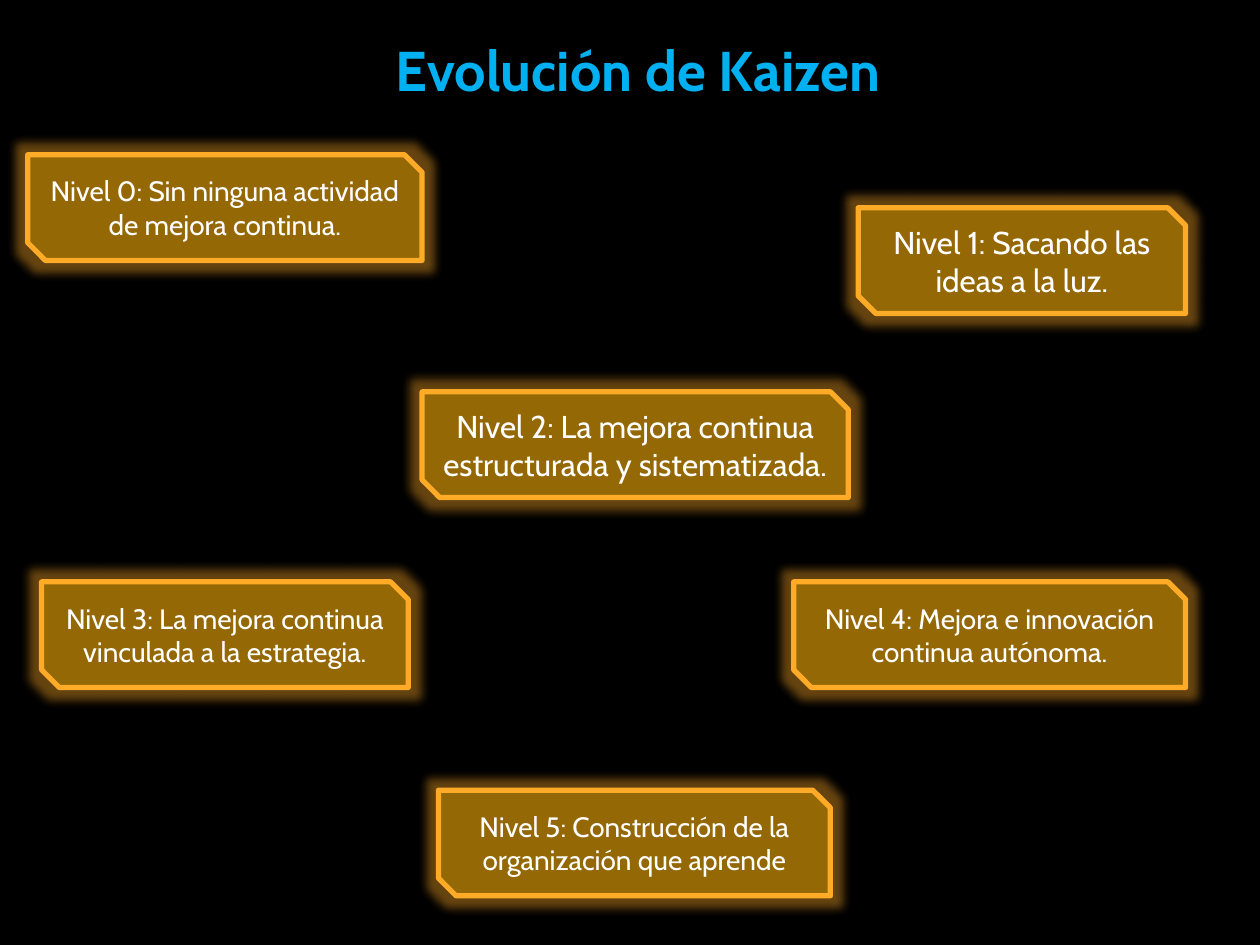
from lxml.etree import SubElement
from pptx import Presentation
from pptx.dml.color import RGBColor
from pptx.enum.shapes import MSO_SHAPE
from pptx.enum.text import MSO_ANCHOR, MSO_AUTO_SIZE, PP_ALIGN
from pptx.oxml.ns import qn
from pptx.util import Cm, Pt

TITLE = "Evolución de Kaizen"
# text, left, top, width (cm), font size (pt)
LEVELS = [
    ("Sin ninguna actividad de mejora continua.", 0.56, 3.12, 7.95, 16),
    ("Sacando las ideas a la luz.", 17.3, 4.19, 6.6, 18),
    ("La mejora continua estructurada y sistematizada.", 8.51, 7.9, 8.59, 18),
    ("La mejora continua vinculada a la estrategia.", 0.84, 11.73, 7.39, 16),
    ("Mejora e innovación continua autónoma.", 16, 11.73, 7.9, 16),
    ("Construcción de la organización que aprende", 8.84, 15.93, 7.9, 16),
]
HEIGHT = 2.13
FONT = "Cabin"
BLACK, WHITE, BLUE = "000000", "FFFFFF", "00B0F0"
BROWN, AMBER = "956806", "FFAB28"


def paint(color, code):
    color.rgb = RGBColor.from_string(code)


def write(frame, text, size, code, bold=False):
    frame.text = text
    frame.word_wrap = True
    para = frame.paragraphs[0]
    para.alignment = PP_ALIGN.CENTER
    font = para.font
    font.name, font.size, font.bold = FONT, Pt(size), bold
    paint(font.color, code)


def add_glow(shape, code, radius, alpha):
    """Replace the theme shadow with a glow; alpha is in percent."""
    shape.shadow.inherit = False
    effects = shape._element.spPr.find(qn("a:effectLst"))
    glow = SubElement(effects, qn("a:glow"), rad=str(Pt(radius)))
    color = SubElement(glow, qn("a:srgbClr"), val=code)
    SubElement(color, qn("a:alpha"), val=str(alpha * 1000))


def add_level(slide, text, left, top, width, size):
    box = slide.shapes.add_shape(MSO_SHAPE.SNIP_2_DIAG_RECTANGLE,
                                 Cm(left), Cm(top), Cm(width), Cm(HEIGHT))
    box.fill.solid()
    paint(box.fill.fore_color, BROWN)
    box.line.width = Pt(3)
    paint(box.line.color, AMBER)
    add_glow(box, AMBER, 11, 40)
    write(box.text_frame, text, size, WHITE)
    box.text_frame.vertical_anchor = MSO_ANCHOR.MIDDLE


def main():
    deck = Presentation()
    deck.slide_width, deck.slide_height = Cm(25.4), Cm(19.05)
    slide = deck.slides.add_slide(deck.slide_layouts[5])
    back = slide.background.fill
    back.solid()
    paint(back.fore_color, BLACK)

    title = slide.shapes.title
    title.left, title.top = Cm(1.09), Cm(0.58)
    title.width, title.height = Cm(23.55), Cm(1.63)
    write(title.text_frame, TITLE, 32, BLUE, bold=True)
    title.text_frame.vertical_anchor = MSO_ANCHOR.TOP
    title.text_frame.auto_size = MSO_AUTO_SIZE.SHAPE_TO_FIT_TEXT

    for number, (text, *place) in enumerate(LEVELS):
        add_level(slide, f"Nivel {number}: {text}", *place)
    deck.save("out.pptx")


if __name__ == "__main__":
    main()
